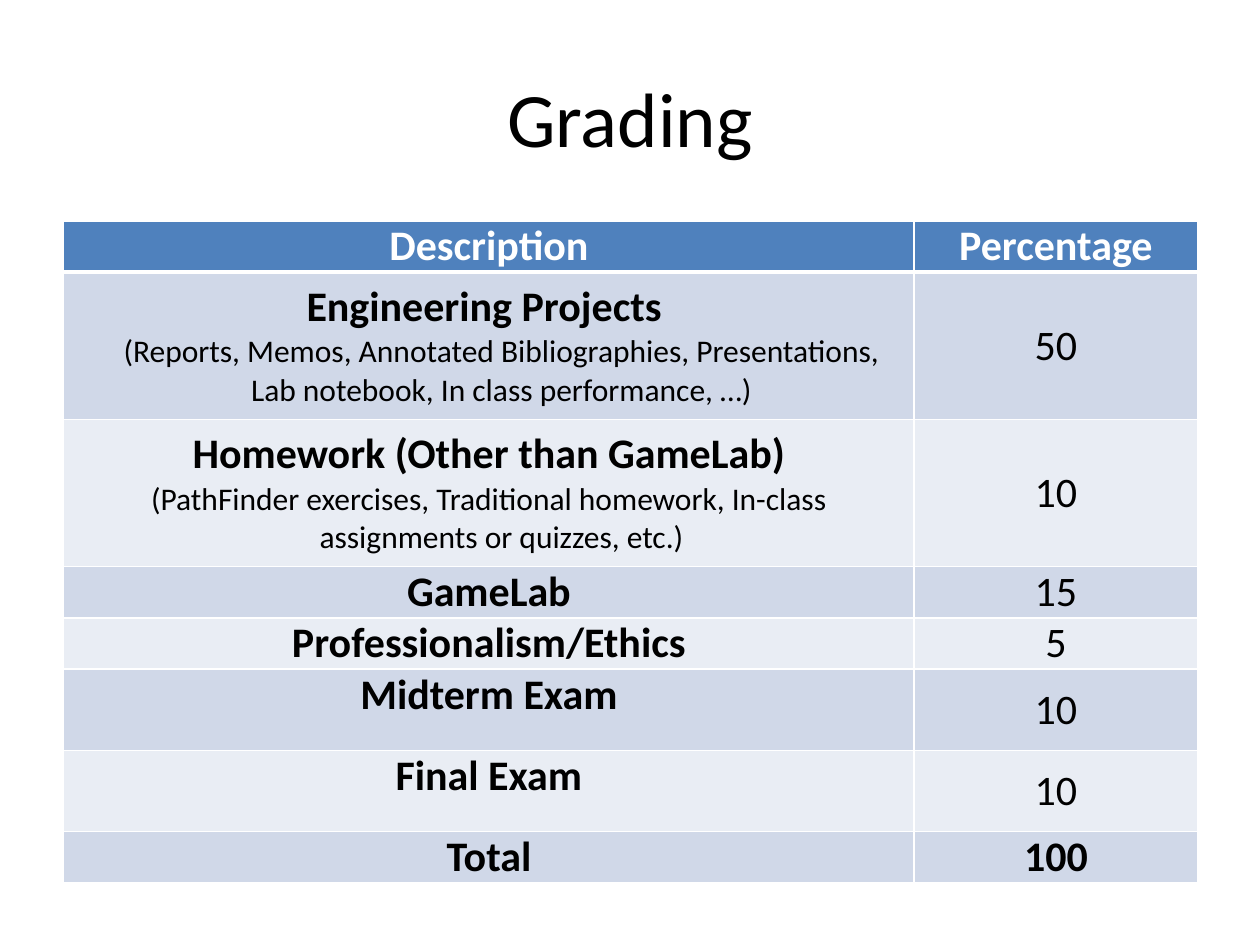
from dataclasses import dataclass

import pptx
import pptx.dml.color
import pptx.enum.text
import pptx.oxml
import pptx.oxml.ns
import pptx.util

Pt = pptx.util.Pt
ALIGN = pptx.enum.text.PP_ALIGN
ANCHOR = pptx.enum.text.MSO_ANCHOR

FONT = "Calibri"
BLACK, WHITE = "000000", "FFFFFF"
HEADER_FILL = "4F81BD"
BAND_FILLS = ("D0D8E8", "E9EDF4")
COLUMN_WIDTHS = (486, 162)


@dataclass
class GradeRow:
    description: str
    percentage: str
    height: float = 29.3
    bold_percentage: bool = False
    anchor: ANCHOR = ANCHOR.MIDDLE


# "\v" breaks a line within a paragraph, "\n" starts a new paragraph
ROWS = [
    GradeRow("Description", "Percentage", bold_percentage=True),
    GradeRow("Engineering Projects \v(Reports, Memos, Annotated Bibliographies, "
             "Presentations, Lab notebook, In class performance, …)", "50", 84.2),
    GradeRow("Homework (Other than GameLab)\n(PathFinder exercises, Traditional "
             "homework, In-class assignments or quizzes, etc.)", "10", 84.2),
    GradeRow("GameLab", "15"),
    GradeRow("Professionalism/Ethics", "5"),
    GradeRow("Midterm Exam", "10", 46.3, anchor=ANCHOR.TOP),
    GradeRow("Final Exam", "10", 46.3, anchor=ANCHOR.TOP),
    GradeRow("Total", "100", bold_percentage=True),
]


def rgb(colour: str) -> pptx.dml.color.RGBColor:
    return pptx.dml.color.RGBColor.from_string(colour)


def format_span(span, size: float, colour: str, bold: bool = False) -> None:
    span.font.name = FONT
    span.font.size = Pt(size)
    span.font.bold = bold
    span.font.color.rgb = rgb(colour)


def add_title(page, text: str) -> None:
    box = page.shapes.add_textbox(Pt(36), Pt(21.6), Pt(648), Pt(90))
    frame = box.text_frame
    frame.word_wrap = True
    frame.vertical_anchor = ANCHOR.MIDDLE
    frame.text = text
    para = frame.paragraphs[0]
    para.alignment = ALIGN.CENTER
    format_span(para.runs[0], 44, BLACK)


def add_borders(cell, top: float, bottom: float) -> None:
    properties = cell._tc.get_or_add_tcPr()
    for side, width in (("L", 1), ("R", 1), ("T", top), ("B", bottom)):
        properties.append(pptx.oxml.parse_xml(
            f'<a:ln{side} {pptx.oxml.ns.nsdecls("a")} w="{Pt(width)}">'
            f'<a:solidFill><a:srgbClr val="{WHITE}"/></a:solidFill></a:ln{side}>'))


def fill_cell(cell, text: str, fill: str, colour: str, bold: bool,
              anchor: ANCHOR, hanging: bool) -> None:
    cell.margin_left = cell.margin_right = Pt(5)
    cell.margin_top = cell.margin_bottom = Pt(0)
    cell.vertical_anchor = anchor
    cell.fill.solid()
    cell.fill.fore_color.rgb = rgb(fill)
    cell.text_frame.text = text
    for para in cell.text_frame.paragraphs:
        para.alignment = ALIGN.CENTER
        if hanging:
            indent = para._p.get_or_add_pPr()
            indent.set("marL", str(Pt(14.4)))
            indent.set("indent", str(Pt(-14.4)))
        for span in para.runs:
            is_note = span.text.startswith("(")
            format_span(span, 18 if is_note else 24, colour, bold and not is_note)


def add_grade_table(page, rows: list[GradeRow]) -> None:
    frame = page.shapes.add_table(
        len(rows), len(COLUMN_WIDTHS), Pt(36.4), Pt(126.2),
        Pt(sum(COLUMN_WIDTHS)), Pt(sum(row.height for row in rows)))
    table = frame.table
    for column, width in zip(table.columns, COLUMN_WIDTHS):
        column.width = Pt(width)
    for index, row in enumerate(rows):
        table.rows[index].height = Pt(row.height)
        header = index == 0
        fill = HEADER_FILL if header else BAND_FILLS[(index - 1) % 2]
        colour = WHITE if header else BLACK
        description, percentage = table.rows[index].cells
        for cell in (description, percentage):
            add_borders(cell, top=3 if index == 1 else 1, bottom=3 if header else 1)
        fill_cell(description, row.description, fill, colour, True, row.anchor, True)
        fill_cell(percentage, row.percentage, fill, colour,
                  row.bold_percentage, ANCHOR.MIDDLE, False)


def main() -> None:
    deck = pptx.Presentation()
    deck.slide_width, deck.slide_height = Pt(720), Pt(540)
    page = deck.slides.add_slide(deck.slide_layouts[6])
    add_title(page, "Grading")
    add_grade_table(page, ROWS)
    deck.save("out.pptx")


if __name__ == "__main__":
    main()
